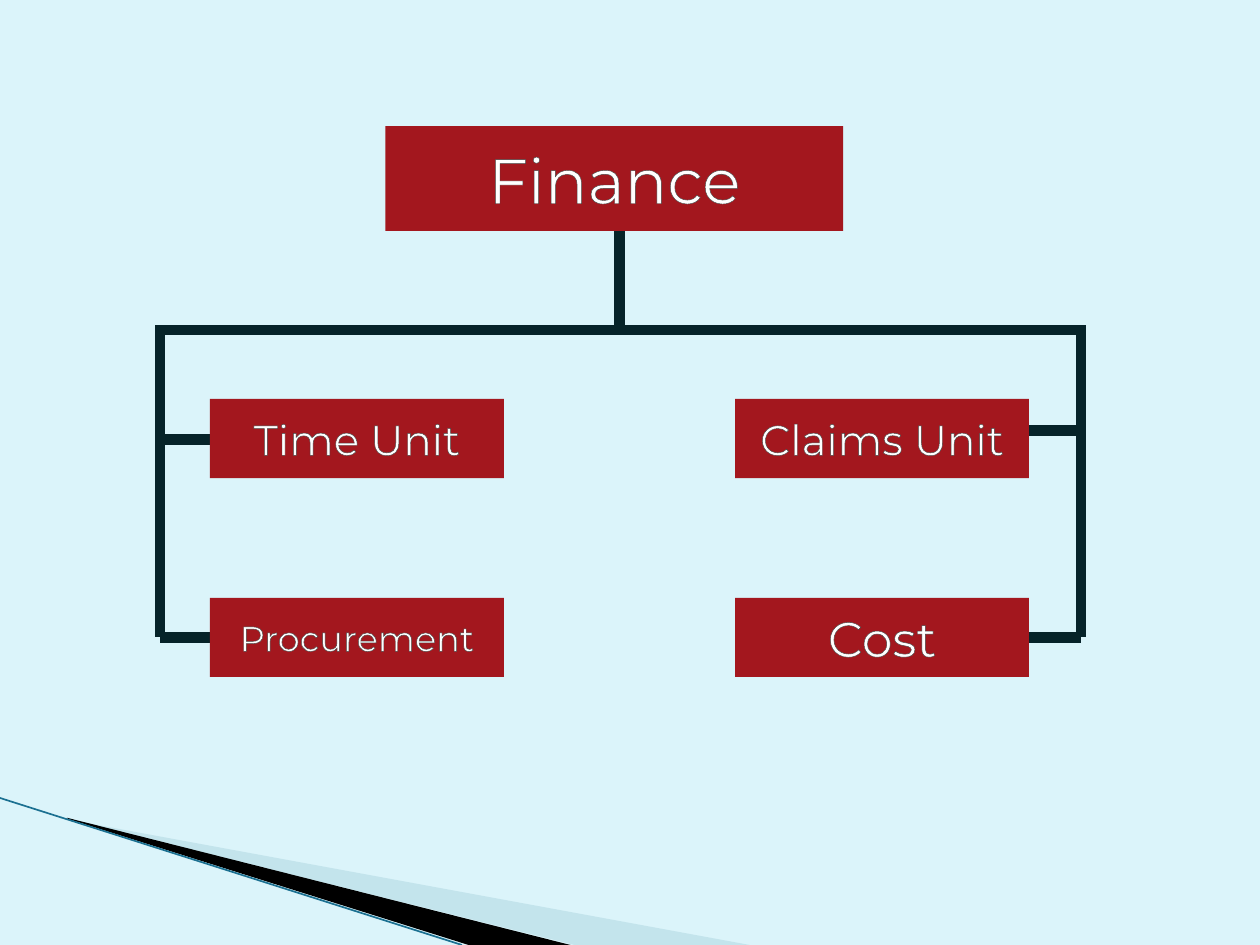
from dataclasses import dataclass

from lxml.etree import SubElement
from pptx import Presentation
from pptx.dml.color import RGBColor
from pptx.enum.shapes import MSO_CONNECTOR, MSO_SHAPE
from pptx.enum.text import MSO_ANCHOR, PP_ALIGN
from pptx.oxml.ns import qn
from pptx.util import Pt

BACKGROUND = "DBF4FA"
BOX_RED = "A3171E"
LINE_DARK = "062329"
TEXT_WHITE = "FFFFFF"
TEXT_OUTLINE = "464646"
FONT = "Montserrat"


@dataclass
class UnitBox:
    text: str
    left: float
    top: float
    width: float
    height: float
    size: float


@dataclass
class Line:
    start: tuple[float, float]
    end: tuple[float, float]
    color: str = LINE_DARK
    width: float = 6


@dataclass
class Wedge:
    points: list[tuple[float, float]]
    color: str


def set_fill(fill, color: str) -> None:
    fill.solid()
    fill.fore_color.rgb = RGBColor.from_string(color)


def draw_line(slide, line: Line) -> None:
    ends = [Pt(value) for value in (*line.start, *line.end)]
    connector = slide.shapes.add_connector(MSO_CONNECTOR.STRAIGHT, *ends)
    set_fill(connector.line.fill, line.color)
    connector.line.width = Pt(line.width)
    SubElement(connector._element.spPr, qn("a:effectLst"))


def draw_wedge(slide, wedge: Wedge) -> None:
    points = [(Pt(x), Pt(y)) for x, y in wedge.points]
    builder = slide.shapes.build_freeform(*points[0])
    builder.add_line_segments(points[1:], close=True)
    shape = builder.convert_to_shape()
    shape.shadow.inherit = False
    set_fill(shape.fill, wedge.color)
    shape.line.fill.background()


def outline_text(font, color: str) -> None:
    outline = SubElement(font._element, qn("a:ln"), w=str(Pt(1)))
    fill = SubElement(outline, qn("a:solidFill"))
    SubElement(fill, qn("a:srgbClr"), val=color)
    font._element.insert(0, outline)


def draw_box(slide, box: UnitBox) -> None:
    shape = slide.shapes.add_shape(
        MSO_SHAPE.RECTANGLE, Pt(box.left), Pt(box.top), Pt(box.width), Pt(box.height)
    )
    shape.shadow.inherit = False
    set_fill(shape.fill, BOX_RED)
    shape.line.fill.background()
    frame = shape.text_frame
    frame.text = box.text
    frame.word_wrap = True
    frame.vertical_anchor = MSO_ANCHOR.MIDDLE
    para = frame.paragraphs[0]
    para.alignment = PP_ALIGN.CENTER
    font = para.runs[0].font
    font.name = FONT
    font.size = Pt(box.size)
    set_fill(font.fill, TEXT_WHITE)
    outline_text(font, TEXT_OUTLINE)


WEDGES = [
    Wedge([(39.6, 468.5), (428.4, 540), (328.3, 540), (39.6, 468)], "C3E4EC"),
    Wedge([(38.2, 467.3), (326, 540), (267.8, 540), (38.9, 468)], "000000"),
]
EDGE = Line((0, 456), (264, 540), "1B7091", 0.95)

CENTER, LEFT_RAIL, RIGHT_RAIL = 354, 91.5, 617.75
CROSSBAR, RAIL_TOP, RAIL_BOTTOM = 188.6, 185.8, 364.3
LEFT_STUB_END, RIGHT_STUB_START = 131.8, 577.4
LINES = [
    Line((CENTER, 116.6), (CENTER, CROSSBAR)),
    Line((90, CROSSBAR), (RIGHT_RAIL, CROSSBAR)),
    *(Line((x, RAIL_TOP), (x, RAIL_BOTTOM)) for x in (LEFT_RAIL, RIGHT_RAIL)),
    *(Line((LEFT_RAIL, y), (LEFT_STUB_END, y)) for y in (251.2, RAIL_BOTTOM)),
    *(Line((RIGHT_STUB_START, y), (RIGHT_RAIL, y)) for y in (246, RAIL_BOTTOM)),
]

LEFT_COLUMN, RIGHT_COLUMN = 120, 420
UPPER_ROW, LOWER_ROW = 228, 341.6
UNIT_SIZE = (168, 45.2)
BOXES = [
    UnitBox("Finance", 220.2, 72, 261.6, 60, 36),
    UnitBox("Time Unit", LEFT_COLUMN, UPPER_ROW, *UNIT_SIZE, 24),
    UnitBox("Procurement", LEFT_COLUMN, LOWER_ROW, *UNIT_SIZE, 20),
    UnitBox("Claims Unit", RIGHT_COLUMN, UPPER_ROW, *UNIT_SIZE, 24),
    UnitBox("Cost", RIGHT_COLUMN, LOWER_ROW, *UNIT_SIZE, 28),
]


def main() -> None:
    deck = Presentation()
    deck.slide_width, deck.slide_height = Pt(720), Pt(540)
    page = deck.slides.add_slide(deck.slide_layouts[6])
    set_fill(page.background.fill, BACKGROUND)
    for wedge in WEDGES:
        draw_wedge(page, wedge)
    for line in [EDGE, *LINES]:
        draw_line(page, line)
    for box in BOXES:
        draw_box(page, box)
    deck.save("out.pptx")


if __name__ == "__main__":
    main()
